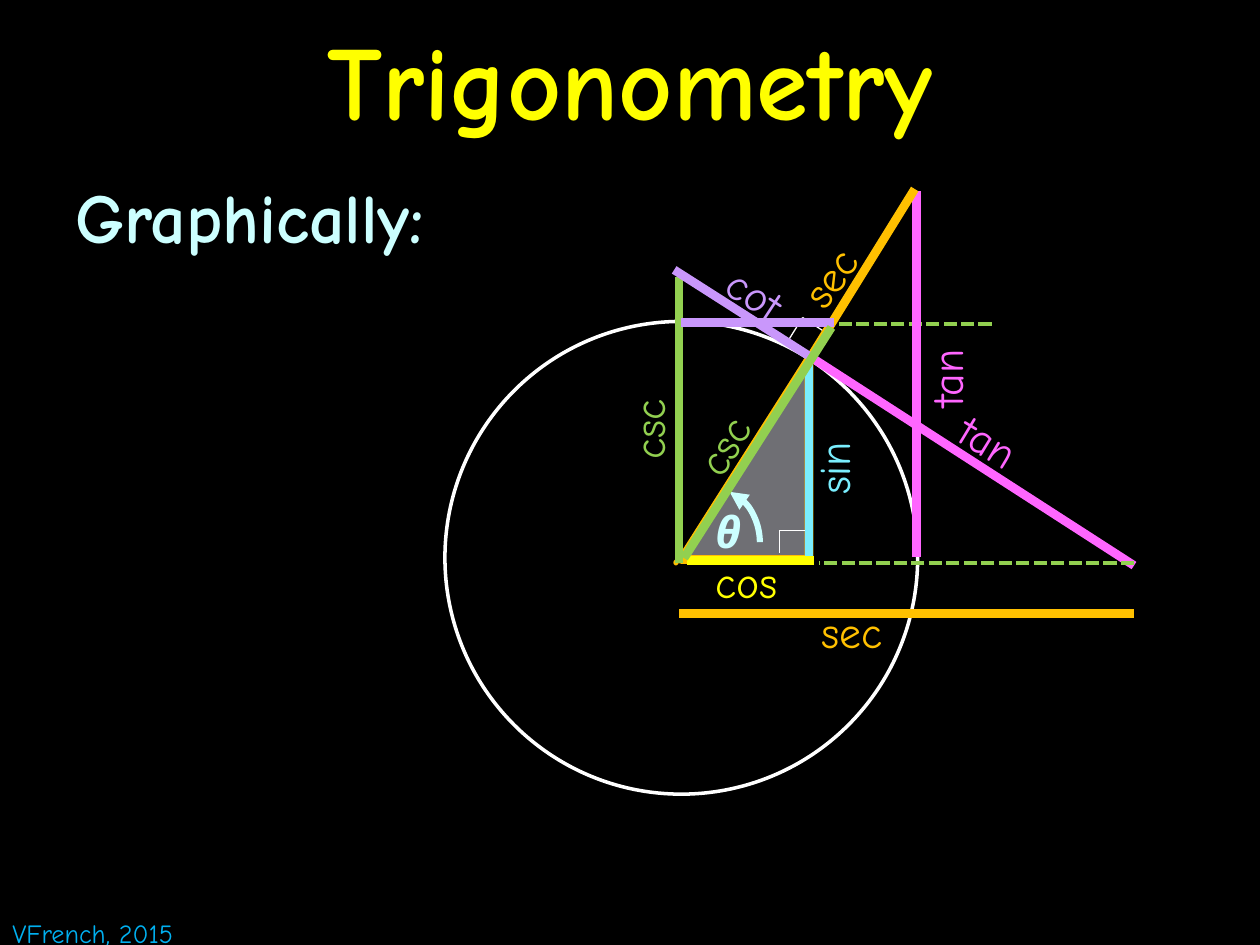
import dataclasses

import pptx
import pptx.dml.color
import pptx.enum.dml
import pptx.enum.shapes
import pptx.enum.text
import pptx.oxml.ns
import pptx.oxml.xmlchemy
import pptx.util
import lxml.etree

Cm = pptx.util.Cm
Pt = pptx.util.Pt
SHAPE = pptx.enum.shapes.MSO_SHAPE
qn = pptx.oxml.ns.qn


@dataclasses.dataclass(frozen=True)
class Theme:
    font: str = "Comic Neue"
    background: str = "000000"
    cos: str = "FFFF00"
    sin: str = "7AEEFE"
    tan: str = "FF66FF"
    cot: str = "C997FB"
    sec: str = "FFC000"
    csc: str = "92D050"
    outline: str = "FFFFFF"
    pale: str = "CCFFFF"
    footer: str = "00B0F0"
    triangle: str = "6F6F74"
    title_size: int = 60
    heading_size: int = 40
    label_size: int = 25
    footer_size: int = 15
    bold_line: float = 5
    arc_line: float = 3.5
    dash_line: float = 2.5
    circle_line: float = 2
    thin_line: float = 0.75


THEME = Theme()
LABEL_HEIGHT = 1.32


def rgb(color):
    return pptx.dml.color.RGBColor.from_string(color)


def add_text(page, text, left, top, width, height, size, color,
             angle=0, wrap=False, grow=True, bold=False, italic=False):
    box = page.shapes.add_textbox(Cm(left), Cm(top), Cm(width), Cm(height))
    box.rotation = angle
    frame = box.text_frame
    frame.word_wrap = wrap
    if grow:
        frame.auto_size = pptx.enum.text.MSO_AUTO_SIZE.SHAPE_TO_FIT_TEXT
    para = frame.paragraphs[0]
    para.text = text
    para.font.name = THEME.font
    para.font.size = Pt(size)
    para.font.color.rgb = rgb(color)
    para.font.bold = bold
    para.font.italic = italic
    return box


def add_label(page, text, left, top, width, color, angle=0):
    add_text(page, text, left, top, width, LABEL_HEIGHT,
             THEME.label_size, color, angle)


def add_line(page, start, end, color, weight=THEME.bold_line, dashed=False):
    line = page.shapes.add_connector(
        pptx.enum.shapes.MSO_CONNECTOR.STRAIGHT,
        Cm(start[0]), Cm(start[1]), Cm(end[0]), Cm(end[1]))
    line.line.color.rgb = rgb(color)
    line.line.width = Pt(weight)
    if dashed:
        line.line.dash_style = pptx.enum.dml.MSO_LINE.SQUARE_DOT
    lxml.etree.SubElement(line._element.spPr, qn("a:effectLst"))


def add_corner(page, points):
    for start, end in zip(points, points[1:]):
        add_line(page, start, end, THEME.outline, THEME.thin_line)


def add_outline(page, kind, left, top, width, height, color, weight, fill=None):
    shape = page.shapes.add_shape(kind, Cm(left), Cm(top), Cm(width), Cm(height))
    shape.shadow.inherit = False
    if fill:
        shape.fill.solid()
        shape.fill.fore_color.rgb = rgb(fill)
    else:
        shape.fill.background()
    shape.line.color.rgb = rgb(color)
    shape.line.width = Pt(weight)
    return shape


def add_triangle(page):
    triangle = add_outline(page, SHAPE.RIGHT_TRIANGLE, 13.74, 7.24, 2.57, 4.04,
                           THEME.sec, THEME.bold_line, THEME.triangle)
    triangle._element.spPr.find(qn("a:xfrm")).set("flipH", "1")


def add_angle_arrow(page):
    arc = add_outline(page, SHAPE.ARC, 13.54, 9.86, 1.78, 2.18,
                      THEME.pale, THEME.arc_line)
    for index, degrees in enumerate((285.11, 358.7)):
        arc.adjustments[index] = degrees * 0.6
    outline = arc._element.spPr.find(qn("a:ln"))
    lxml.etree.SubElement(outline, qn("a:headEnd"), type="triangle")


def add_headings(page):
    title = add_text(page, "Trigonometry", 0, 0, 25.4, 3.18, THEME.title_size,
                     THEME.cos, wrap=True, grow=False, bold=True)
    title.text_frame.vertical_anchor = pptx.enum.text.MSO_ANCHOR.MIDDLE
    title.text_frame.paragraphs[0].alignment = pptx.enum.text.PP_ALIGN.CENTER
    add_text(page, "VFrench, 2015", 0, 18.36, 4.29, 0.89,
             THEME.footer_size, THEME.footer)
    body = add_text(page, "Graphically:", 1.27, 3.38, 22.86, 15.67,
                    THEME.heading_size, THEME.pale,
                    wrap=True, grow=False, bold=True)
    body.text_frame.paragraphs[0].space_before = Pt(THEME.heading_size * 0.2)


def add_circle_and_triangle(page):
    add_line(page, (13.74, 11.28), (16.31, 11.28), THEME.cos)
    add_line(page, (19.99, 6.53), (13.64, 6.53), THEME.csc, THEME.dash_line, True)
    add_corner(page, [(16.61, 6.68), (16.18, 6.4), (15.88, 6.88)])
    add_outline(page, SHAPE.OVAL, 8.97, 6.48, 9.53, 9.53,
                THEME.outline, THEME.circle_line)
    add_text(page, ".", 13.28, 9.86, 0.86, 1.96, THEME.heading_size, THEME.sec)
    add_triangle(page)
    add_corner(page, [(16.31, 10.69), (15.72, 10.69), (15.72, 11.15)])
    add_text(page, "θ", 14.17, 10.06, 1.27, LABEL_HEIGHT, THEME.label_size,
             THEME.pale, wrap=True, bold=True, italic=True)
    add_angle_arrow(page)


def add_functions(page):
    add_label(page, "sin", 15.98, 8.74, 1.65, THEME.sin, 270)
    add_label(page, "cos", 14.17, 11.05, 1.88, THEME.cos)
    add_line(page, (13.69, 11.35), (13.69, 5.59), THEME.csc)
    add_line(page, (22.86, 11.4), (16.41, 7.24), THEME.tan)
    add_line(page, (16.31, 7.24), (16.31, 11.25), THEME.sin)
    add_line(page, (22.86, 11.35), (16.51, 11.35), THEME.csc, THEME.dash_line, True)
    add_line(page, (18.47, 11.23), (18.47, 3.86), THEME.tan)
    add_line(page, (16.1, 7.59), (18.44, 3.81), THEME.sec)
    add_label(page, "tan", 18.16, 6.88, 1.85, THEME.tan, 270)
    add_label(page, "csc", 12.14, 7.92, 1.85, THEME.csc, 270)
    add_label(page, "sec", 15.82, 4.85, 1.91, THEME.sec, 305.9)
    add_line(page, (16.41, 7.24), (13.59, 5.44), THEME.cot)
    add_label(page, "cot", 14.4, 5.31, 1.85, THEME.cot, 33.4)
    add_line(page, (13.69, 12.37), (22.86, 12.37), THEME.sec)
    add_label(page, "sec", 16.31, 12.07, 1.91, THEME.sec)
    add_label(page, "tan", 19.1, 8.28, 1.85, THEME.tan, 31.1)
    add_line(page, (16.41, 11.3), (13.84, 11.3), THEME.cos)
    add_line(page, (16.81, 6.5), (13.72, 6.5), THEME.cot)
    add_line(page, (13.79, 11.25), (16.76, 6.6), THEME.csc)
    add_label(page, "csc", 13.69, 8.26, 1.85, THEME.csc, 301.3)


def main():
    deck = pptx.Presentation()
    deck.slide_width = Cm(25.4)
    deck.slide_height = Cm(19.05)
    page = deck.slides.add_slide(deck.slide_layouts[6])
    page.background.fill.solid()
    page.background.fill.fore_color.rgb = rgb(THEME.background)
    add_headings(page)
    add_circle_and_triangle(page)
    add_functions(page)
    deck.save("out.pptx")


if __name__ == "__main__":
    main()
